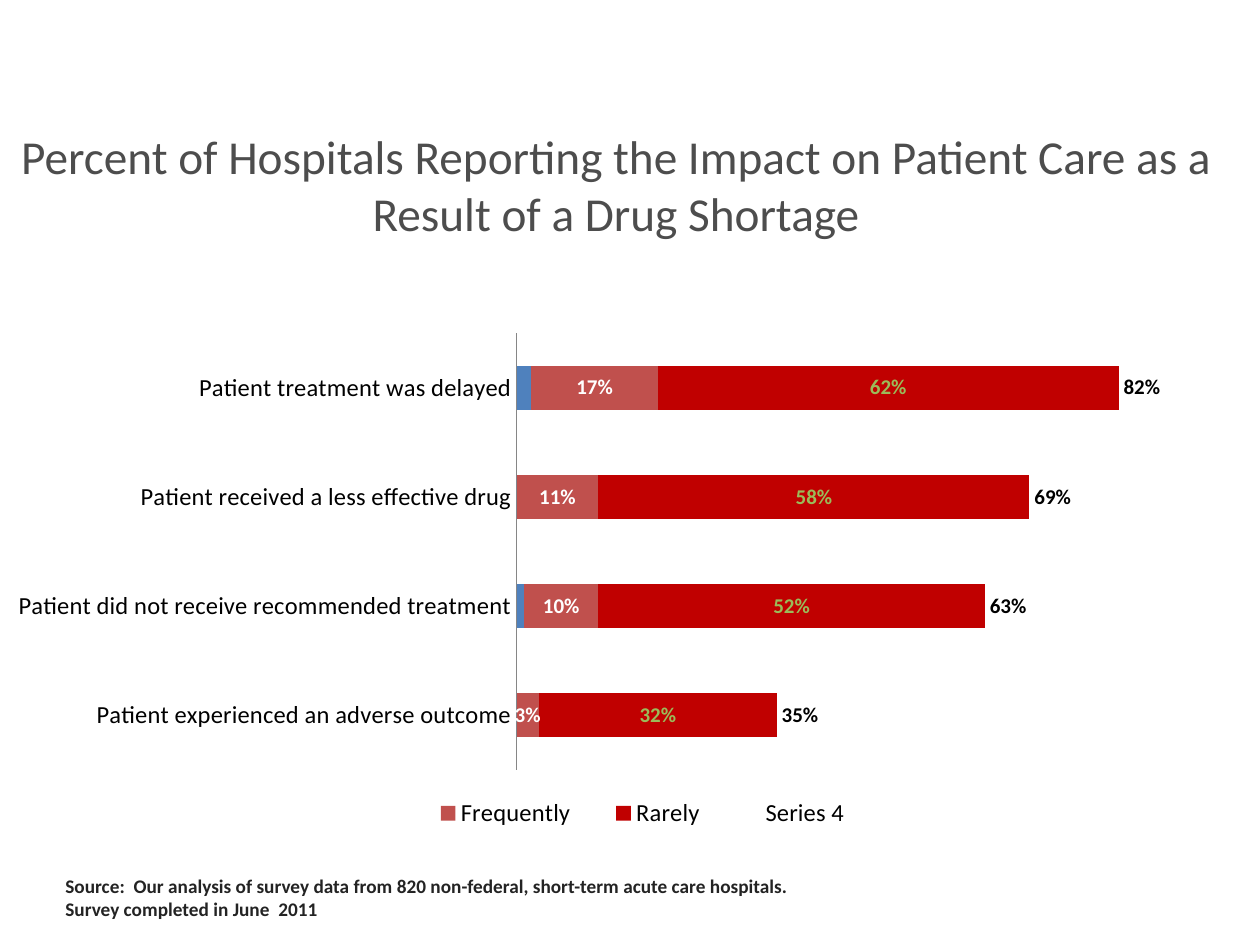
from dataclasses import dataclass

from lxml import etree
from pptx import Presentation
from pptx import util as u
from pptx.chart import data as chart_data
from pptx.dml import color
from pptx.enum import chart as charts, text
from pptx.oxml import ns

PX = u.Inches(1) // 126


@dataclass(frozen=True)
class Theme:
    font: str = "Calibri"
    title: str = "4D4D4D"
    source: str = "232323"
    ink: str = "000000"
    axis: str = "868686"
    white: str = "FFFFFF"
    green: str = "9BBB59"
    always: str = "4F81BD"
    frequently: str = "C0504D"
    rarely: str = "C00000"
    title_size: int = 27
    chart_size: int = 18
    axis_size: int = 14
    label_size: int = 12
    source_size: int = 11


def rgb(value):
    return color.RGBColor.from_string(value)


@dataclass
class SlideBuilder:
    theme: Theme
    slide: object

    def style(self, font, size, ink, bold=False):
        font.name = self.theme.font
        font.size = u.Pt(size)
        font.bold = bold
        font.color.rgb = rgb(ink)

    def place(self, shape, box):
        shape.left, shape.top, shape.width, shape.height = (n * PX for n in box)

    def add_run(self, paragraph, words, *style):
        run = paragraph.add_run()
        run.text = words
        self.style(run.font, *style)

    def title(self, words, box):
        shape = self.slide.shapes.title
        self.place(shape, box)
        frame = shape.text_frame
        frame.word_wrap = True
        frame.auto_size = text.MSO_AUTO_SIZE.NONE
        frame.vertical_anchor = text.MSO_ANCHOR.MIDDLE
        paragraph = frame.paragraphs[0]
        paragraph.alignment = text.PP_ALIGN.CENTER
        self.add_run(paragraph, words, self.theme.title_size, self.theme.title)

    def source(self, lines, box):
        frame = self.slide.shapes.add_textbox(*(n * PX for n in box)).text_frame
        frame.word_wrap = True
        for index, line in enumerate(lines):
            paragraph = frame.add_paragraph() if index else frame.paragraphs[0]
            self.add_run(paragraph, line, self.theme.source_size,
                         self.theme.source, True)

    def layout(self, parent, index, fractions, inner=False):
        """Give a chart part a fixed place, in fractions of the chart."""
        old = parent.find(ns.qn("c:layout"))
        if old is not None:
            parent.remove(old)
        layout = etree.Element(ns.qn("c:layout"))
        manual = etree.SubElement(layout, ns.qn("c:manualLayout"))
        settings = [("layoutTarget", "inner")] if inner else []
        settings += [("xMode", "edge"), ("yMode", "edge")]
        settings += zip("xywh", map(str, fractions))
        for tag, value in settings:
            etree.SubElement(manual, ns.qn(f"c:{tag}")).set("val", value)
        parent.insert(index, layout)

    def labels(self, series, ink, position):
        labels = series.data_labels
        labels.show_value = True
        labels.number_format = "0%"
        labels.number_format_is_linked = False
        labels.position = position
        self.style(labels.font, self.theme.label_size, ink, True)

    def legend(self, chart, fractions, hidden):
        chart.has_legend = True
        legend = chart.legend
        legend.position = charts.XL_LEGEND_POSITION.RIGHT
        legend.include_in_layout = False
        self.style(legend.font, self.theme.axis_size, self.theme.ink)
        element = legend._element
        self.layout(element, 1, fractions)
        entry = etree.Element(ns.qn("c:legendEntry"))
        etree.SubElement(entry, ns.qn("c:idx")).set("val", str(hidden))
        etree.SubElement(entry, ns.qn("c:delete")).set("val", "1")
        element.insert(1, entry)

    def stacked_bars(self, categories, rows, box):
        data = chart_data.CategoryChartData(number_format="0%")
        data.categories = categories
        for name, values, *_ in rows:
            data.add_series(name, values)
        chart = self.slide.shapes.add_chart(
            charts.XL_CHART_TYPE.BAR_STACKED, *(n * PX for n in box), data).chart
        chart.has_title = False
        self.style(chart.font, self.theme.chart_size, self.theme.ink)
        plot = chart.plots[0]
        plot.gap_width = 150
        plot.overlap = 100
        plot.vary_by_categories = False

        # Series fills and labels
        for series, (_, _, fill, ink, position) in zip(plot.series, rows):
            if fill:
                series.format.fill.solid()
                series.format.fill.fore_color.rgb = rgb(fill)
            else:
                series.format.fill.background()
            if ink:
                self.labels(series, ink, position)

        # Axes
        axis = chart.category_axis
        axis.major_tick_mark = charts.XL_TICK_MARK.NONE
        axis.format.line.color.rgb = rgb(self.theme.axis)
        axis.format.line.width = u.Pt(1)
        self.style(axis.tick_labels.font, self.theme.axis_size, self.theme.ink)
        values = chart.value_axis
        values.minimum_scale = 0
        values.maximum_scale = 1
        values.has_major_gridlines = False
        values.visible = False

        plot_area = chart._chartSpace.chart.plotArea
        self.layout(plot_area, 0, (0.41, 0.034, 0.59, 0.82), inner=True)
        return chart


def main():
    presentation = Presentation()
    presentation.slide_width = 1260 * PX
    presentation.slide_height = 945 * PX
    theme = Theme()
    slide = presentation.slides.add_slide(presentation.slide_layouts[5])
    builder = SlideBuilder(theme, slide)

    # Title
    builder.title("Percent of Hospitals Reporting the Impact on Patient Care "
                  "as a Result of a Drug Shortage", (0, 179, 1232, 10))

    # Chart: the unfilled last series carries the totals
    center = charts.XL_LABEL_POSITION.CENTER
    base = charts.XL_LABEL_POSITION.INSIDE_BASE
    categories = ["Patient experienced an adverse outcome",
                  "Patient did not receive recommended treatment",
                  "Patient received a less effective drug",
                  "Patient treatment was delayed"]
    rows = [
        ("Always", (0, 0.01, 0, 0.02), theme.always, None, None),
        ("Frequently", (0.03, 0.1, 0.11, 0.17), theme.frequently, theme.white, center),
        ("Rarely", (0.32, 0.52, 0.58, 0.62), theme.rarely, theme.green, center),
        ("Series 4", (0.35, 0.63, 0.69, 0.82), None, theme.ink, base),
    ]
    chart = builder.stacked_bars(categories, rows, (0, 315, 1260, 533))
    builder.legend(chart, (0.32, 0.89, 0.38, 0.09), hidden=3)

    # Source note
    builder.source(["Source:  Our analysis of survey data from 820 non-federal, "
                    "short-term acute care hospitals.",
                    "Survey completed in June  2011"], (53, 868, 1148, 77))

    presentation.save("out.pptx")


if __name__ == "__main__":
    main()
